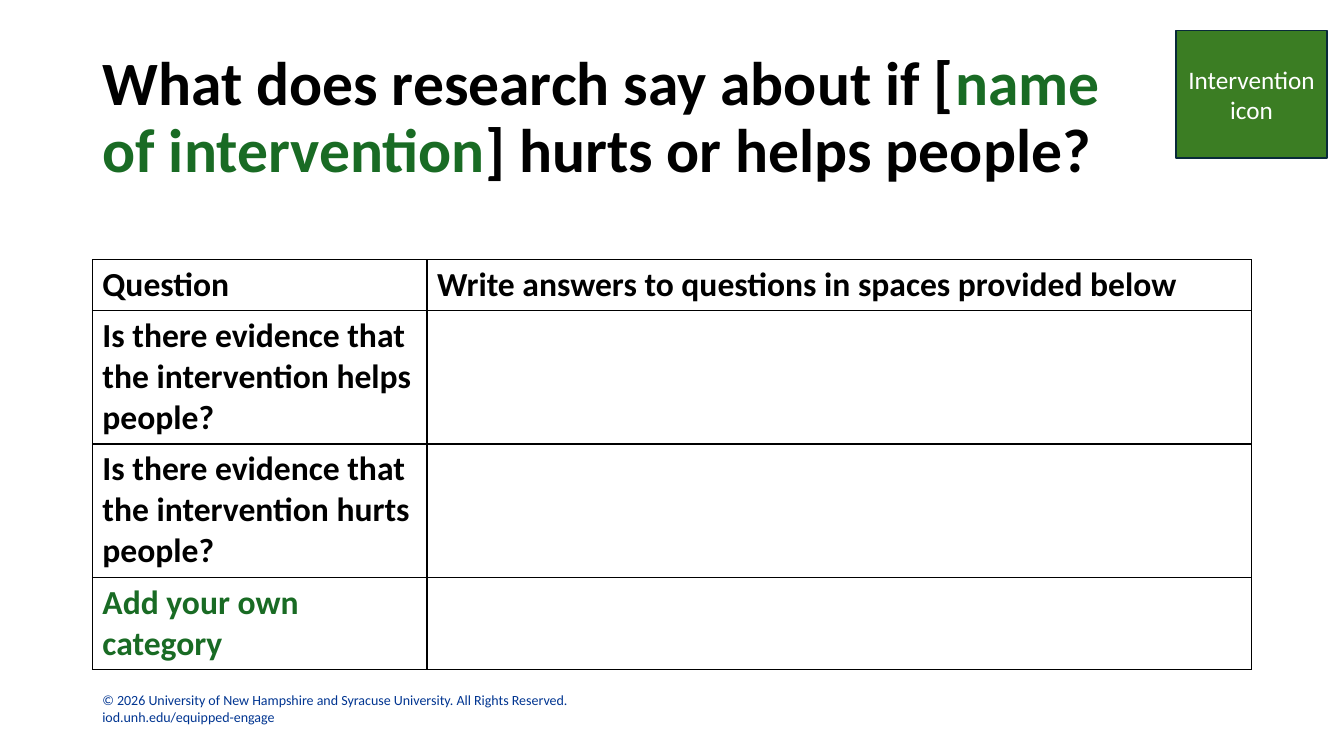
from lxml.etree import SubElement
from pptx import Presentation
from pptx.dml.color import RGBColor
from pptx.enum.shapes import MSO_SHAPE
from pptx.enum.text import MSO_ANCHOR, MSO_AUTO_SIZE, PP_ALIGN
from pptx.oxml.ns import qn
from pptx.util import Pt

FONT = "Calibri"
BLACK = "000000"
GREEN = "196B24"
QUESTIONS = [
    ("Question", BLACK),
    ("Is there evidence that the intervention helps people?", BLACK),
    ("Is there evidence that the intervention hurts people?", BLACK),
    ("Add your own category", GREEN),
]
ANSWER_HEADING = "Write answers to questions in spaces provided below"
COLUMN_WIDTHS = [239, 589]
ROW_HEIGHTS = [36.5, 95.2, 95.2, 66]


def color(hex_string):
    return RGBColor.from_string(hex_string)


def format_font(font, size, hex_color, bold=False):
    font.name = FONT
    font.size = Pt(size)
    font.bold = bold
    font.color.rgb = color(hex_color)


def place(shape, left, top, width, height):
    shape.left, shape.top = Pt(left), Pt(top)
    shape.width, shape.height = Pt(width), Pt(height)


def add_title(page, pieces):
    title = page.shapes.title
    place(title, 66, 29.5, 760, 106.5)
    frame = title.text_frame
    frame.auto_size = MSO_AUTO_SIZE.NONE
    frame.vertical_anchor = MSO_ANCHOR.BOTTOM
    para = frame.paragraphs[0]
    para.alignment = PP_ALIGN.LEFT
    para.line_spacing = 0.9
    for text, hex_color in pieces:
        span = para.add_run()
        span.text = text
        format_font(span.font, 44, hex_color, bold=True)


def add_icon_box(page, text):
    box = page.shapes.add_shape(
        MSO_SHAPE.RECTANGLE, Pt(840), Pt(22), Pt(108), Pt(91))
    box.shadow.inherit = False
    box.fill.solid()
    box.fill.fore_color.rgb = color("3B7D23")
    box.line.color.rgb = color("092A39")
    box.line.width = Pt(1)
    frame = box.text_frame
    frame.vertical_anchor = MSO_ANCHOR.MIDDLE
    frame.text = text
    para = frame.paragraphs[0]
    para.alignment = PP_ALIGN.CENTER
    format_font(para.runs[0].font, 18, "FFFFFF")


def add_borders(cell):
    properties = cell._tc.get_or_add_tcPr()
    for side in ("a:lnL", "a:lnR", "a:lnT", "a:lnB"):
        line = SubElement(properties, qn(side), w=str(Pt(1)))
        fill = SubElement(line, qn("a:solidFill"))
        SubElement(fill, qn("a:srgbClr"), val=BLACK)


def fill_cell(cell, text, hex_color):
    cell.text = text
    para = cell.text_frame.paragraphs[0]
    format_font(para.font, 24, hex_color, bold=True)
    for span in para.runs:
        format_font(span.font, 24, hex_color, bold=True)


def add_question_table(page):
    table = page.shapes.add_table(
        len(ROW_HEIGHTS), len(COLUMN_WIDTHS), Pt(66), Pt(185.5),
        Pt(sum(COLUMN_WIDTHS)), Pt(sum(ROW_HEIGHTS))).table
    table.horz_banding = False
    for column, width in zip(table.columns, COLUMN_WIDTHS):
        column.width = Pt(width)
    for row, height in zip(table.rows, ROW_HEIGHTS):
        row.height = Pt(height)
    for cell in table.iter_cells():
        add_borders(cell)
        cell.fill.background()
    for index, (question, hex_color) in enumerate(QUESTIONS):
        fill_cell(table.cell(index, 0), question, hex_color)
        fill_cell(table.cell(index, 1), "" if index else ANSWER_HEADING, BLACK)


def add_copyright(page, text):
    box = page.shapes.add_textbox(Pt(66), Pt(490.5), Pt(385), Pt(31.5))
    frame = box.text_frame
    frame.word_wrap = True
    para = frame.paragraphs[0]
    para.text = text
    for span in para.runs:
        format_font(span.font, 10, "013591")


def main():
    deck = Presentation()
    deck.slide_width, deck.slide_height = Pt(960), Pt(540)
    page = deck.slides.add_slide(deck.slide_layouts.get_by_name("Title Only"))
    add_copyright(
        page,
        "© 2026 University of New Hampshire and Syracuse University. "
        "All Rights Reserved.\viod.unh.edu/equipped-engage")
    add_title(page, [
        ("What does research say about if [", BLACK),
        ("name of intervention", GREEN),
        ("] hurts or helps people?", BLACK),
    ])
    add_icon_box(page, "Intervention icon")
    add_question_table(page)
    deck.save("out.pptx")


if __name__ == "__main__":
    main()
